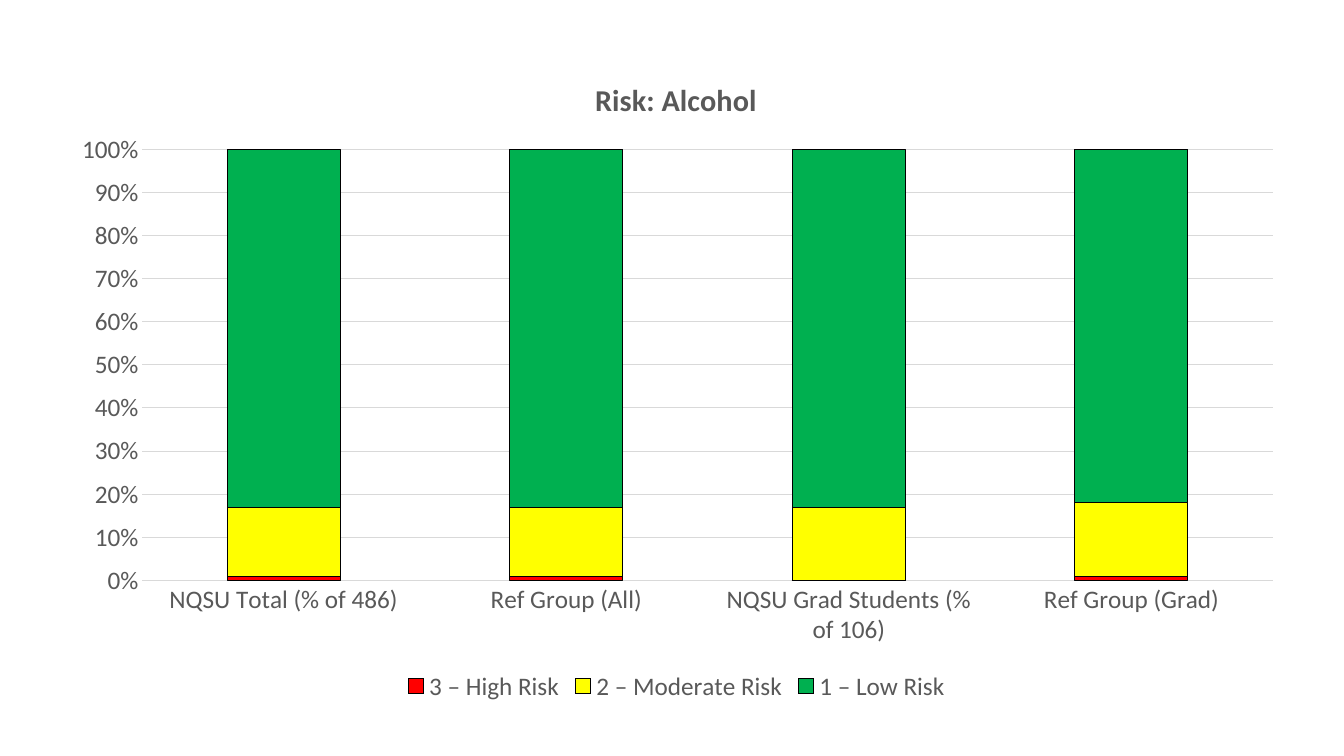
from lxml import etree
from pptx import Presentation
from pptx.chart.data import CategoryChartData
from pptx.dml.color import RGBColor
from pptx.enum.chart import XL_CHART_TYPE, XL_LEGEND_POSITION, XL_TICK_MARK
from pptx.oxml.ns import qn
from pptx.util import Inches, Pt

STACKED = XL_CHART_TYPE.COLUMN_STACKED_100
BOTTOM = XL_LEGEND_POSITION.BOTTOM
NO_TICK = XL_TICK_MARK.NONE
COLORS = {
    "text": "595959",
    "grid": "D9D9D9",
    "outline": "000000",
    "high": "FF0000",
    "moderate": "FFFF00",
    "low": "00B050",
}
CATEGORIES = ["NQSU Total (% of 486)", "Ref Group (All)",
              "NQSU Grad Students (% of 106)", "Ref Group (Grad)"]
RISKS = [
    ("3 – High Risk", "high", (1, 1, 0, 1)),
    ("2 – Moderate Risk", "moderate", (16, 16, 17, 17)),
    ("1 – Low Risk", "low", (83, 83, 83, 82)),
]


def rgb(name):
    return RGBColor.from_string(COLORS[name])


def set_layout(parent, index, **values):
    """Place a chart part by fractions of the chart area."""
    for old in parent.findall(qn("c:layout")):
        parent.remove(old)
    layout = etree.Element(qn("c:layout"))
    manual = etree.SubElement(layout, qn("c:manualLayout"))
    for tag, value in values.items():
        etree.SubElement(manual, qn("c:" + tag)).set("val", str(value))
    parent.insert(index, layout)


prs = Presentation()
prs.slide_width, prs.slide_height = Inches(13.33), Inches(7.5)
slide = prs.slides.add_slide(prs.slide_layouts[6])

data = CategoryChartData()
data.categories = CATEGORIES
for name, color, values in RISKS:
    data.add_series(name, values)
chart = slide.shapes.add_chart(STACKED, Inches(0.55), Inches(0.46),
                               Inches(12.32), Inches(6.55), data).chart
chart.font.name = "Calibri"
chart.font.size = Pt(18)
chart.font.color.rgb = rgb("text")

# Title
chart.has_title = True
title = chart.chart_title
title.include_in_layout = False
p = title.text_frame.paragraphs[0]
p.text = "Risk: Alcohol"
font = p.runs[0].font
font.name, font.size, font.bold = "Calibri", Pt(21.6), True
font.color.rgb = rgb("text")
set_layout(title._element, 1, xMode="edge", yMode="edge", x=0.43, y=0.04)

# Columns
plot = chart.plots[0]
plot.gap_width, plot.overlap = 150, 100
plot.vary_by_categories = False
for series, (name, color, values) in zip(plot.series, RISKS):
    series.format.fill.solid()
    series.format.fill.fore_color.rgb = rgb(color)
    series.format.line.color.rgb = rgb("outline")
    series.format.line.width = Pt(0.75)
plot_area = chart._chartSpace.chart.plotArea
set_layout(plot_area, 0, layoutTarget="inner", xMode="edge", yMode="edge",
           x=0.07, y=0.156, w=0.91, h=0.653)

# Axes
cat_axis, val_axis = chart.category_axis, chart.value_axis
for axis in (cat_axis, val_axis):
    axis.major_tick_mark = axis.minor_tick_mark = NO_TICK
val_axis.minimum_scale, val_axis.maximum_scale = 0, 1
val_axis.major_unit = 0.1
val_axis.tick_labels.number_format = "0%"
val_axis.tick_labels.number_format_is_linked = False
val_axis.format.line.fill.background()
val_axis.has_major_gridlines = True
for line in (cat_axis.format.line, val_axis.major_gridlines.format.line):
    line.color.rgb = rgb("grid")
    line.width = Pt(0.75)

# Legend
chart.has_legend = True
chart.legend.position = BOTTOM
chart.legend.include_in_layout = False

prs.save("out.pptx")
